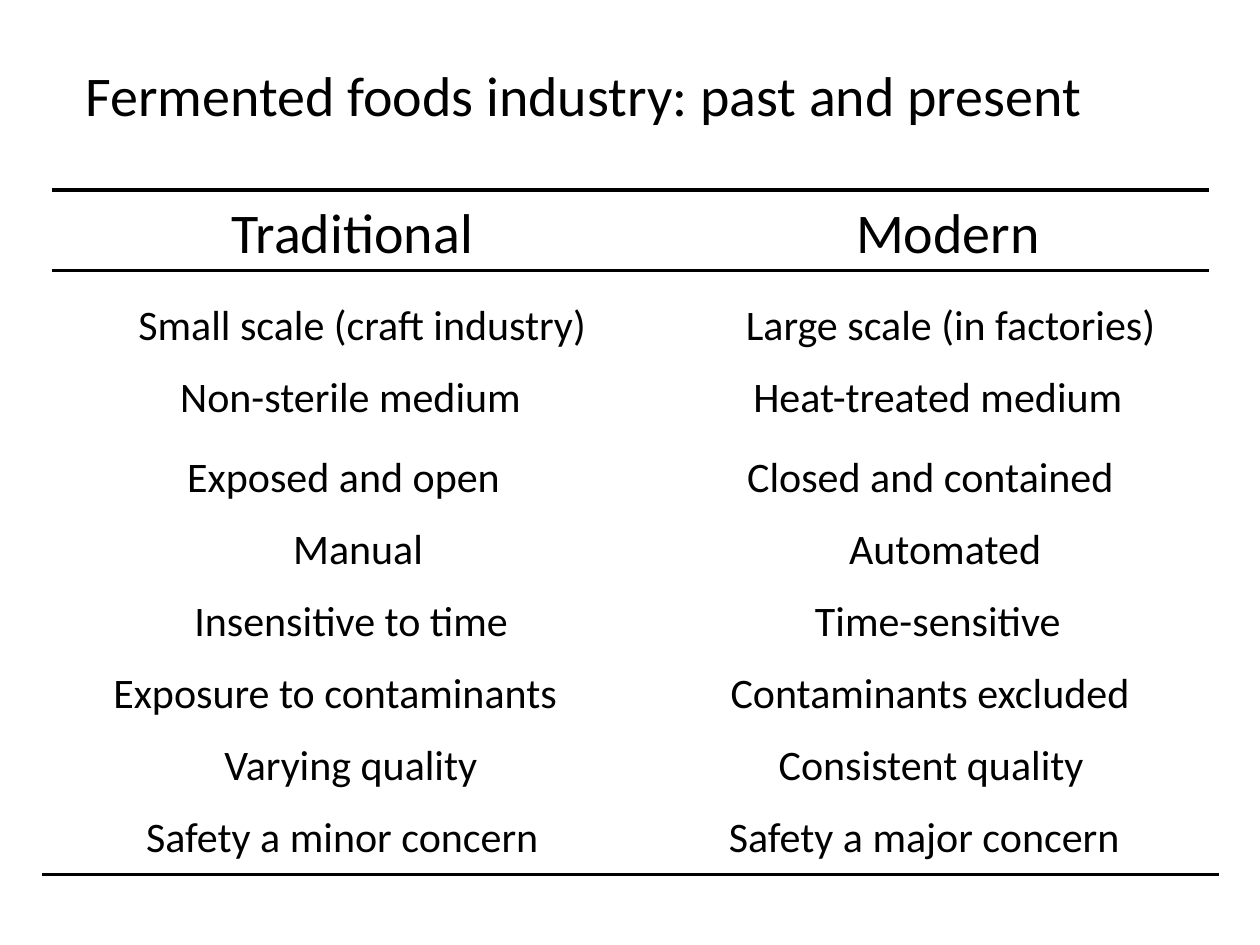
from dataclasses import dataclass

from lxml import etree
from pptx import Presentation
from pptx.dml.color import RGBColor
from pptx.enum import shapes, text
from pptx.oxml.ns import qn
from pptx.util import Pt


@dataclass(frozen=True)
class Theme:
    font: str = "Calibri"
    ink: RGBColor = RGBColor(0, 0, 0)
    heading: float = 32
    body: float = 24
    rule: float = 2


@dataclass(frozen=True)
class Box:
    left: float
    top: float
    width: float
    height: float


THEME = Theme()
LEFT, CENTER = text.PP_ALIGN.LEFT, text.PP_ALIGN.CENTER

# Each column: axis within the table, then (wording, block width) pairs.
# Blocks are centred on the axis; their text starts at the block's left edge.
COLUMNS = [
    (177.5, ("Traditional", 149), [
        ("Small scale (craft industry)", 317.5),
        ("Non-sterile medium", 208),
        ("Exposed and open", 200),
        ("Manual", 79),
        ("Insensitive to time", 192),
        ("Exposure to contaminants", 284.5),
        ("Varying quality", 157.5),
        ("Safety a minor concern", 247),
    ]),
    (513.7, ("Modern", 108), [
        ("Large scale (in factories)", 263),
        ("Heat-treated medium", 225.5),
        ("Closed and contained", 232.5),
        ("Automated", 116),
        ("Time-sensitive", 155),
        ("Contaminants excluded", 251.5),
        ("Consistent quality", 196.5),
        ("Safety a major concern", 253.5),
    ]),
]
FIRST_ROW, ROW_PITCH, GROUP_GAP, GROUP_START = 62, 41.2, 4.3, 2


def write(shape, wording, size, align=LEFT, margins=(0, 0, 0, 0)):
    frame = shape.text_frame
    frame.word_wrap = True
    frame.auto_size = text.MSO_AUTO_SIZE.NONE
    frame.vertical_anchor = text.MSO_ANCHOR.TOP
    (frame.margin_left, frame.margin_top,
     frame.margin_right, frame.margin_bottom) = map(Pt, margins)
    para = frame.paragraphs[0]
    para.alignment = align
    span = para.add_run()
    span.text = wording
    span.font.name = THEME.font
    span.font.size = Pt(size)
    span.font.color.rgb = THEME.ink


def add_label(page, axis, top, width, wording, size, align=LEFT):
    label = page.shapes.add_textbox(
        Pt(axis - width / 2), Pt(top), Pt(width), Pt(size * 1.2))
    write(label, wording, size, align)


def add_rule(page, left, right, y):
    rule = page.shapes.add_connector(
        shapes.MSO_CONNECTOR.STRAIGHT, Pt(left), Pt(y), Pt(right), Pt(y))
    rule.line.color.rgb = THEME.ink
    rule.line.width = Pt(THEME.rule)
    etree.SubElement(rule._element.spPr, qn("a:effectLst"))


def place_title(page, box, wording):
    title = page.shapes.title
    title.left, title.top = Pt(box.left), Pt(box.top)
    title.width, title.height = Pt(box.width), Pt(box.height)
    write(title, wording, THEME.heading, margins=(14.4, 3.6, 7.2, 3.6))


def place_comparison(page, box):
    """Two ruled columns of freely set labels, with a wider closing rule."""
    right = box.left + box.width
    for y in (0, 46):
        add_rule(page, box.left, right, box.top + y)
    add_rule(page, box.left - 5.5, right + 5.5, box.top + box.height)

    for offset, (heading, heading_width), entries in COLUMNS:
        axis = box.left + offset
        add_label(page, axis, box.top + 4.3, heading_width, heading, THEME.heading)
        for row, (wording, width) in enumerate(entries):
            top = box.top + FIRST_ROW + row * ROW_PITCH
            if row >= GROUP_START:
                top += GROUP_GAP
            add_label(page, axis, top, width, wording, THEME.body,
                      LEFT if row else CENTER)


def main():
    deck = Presentation()
    deck.slide_width, deck.slide_height = Pt(720), Pt(540)
    page = deck.slides.add_slide(deck.slide_layouts.get_by_name("Title Only"))
    place_title(page, Box(34.5, 31, 650, 45.5),
                "Fermented foods industry: past and present")
    place_comparison(page, Box(29.5, 108.7, 661.5, 391))
    deck.save("out.pptx")


if __name__ == "__main__":
    main()
